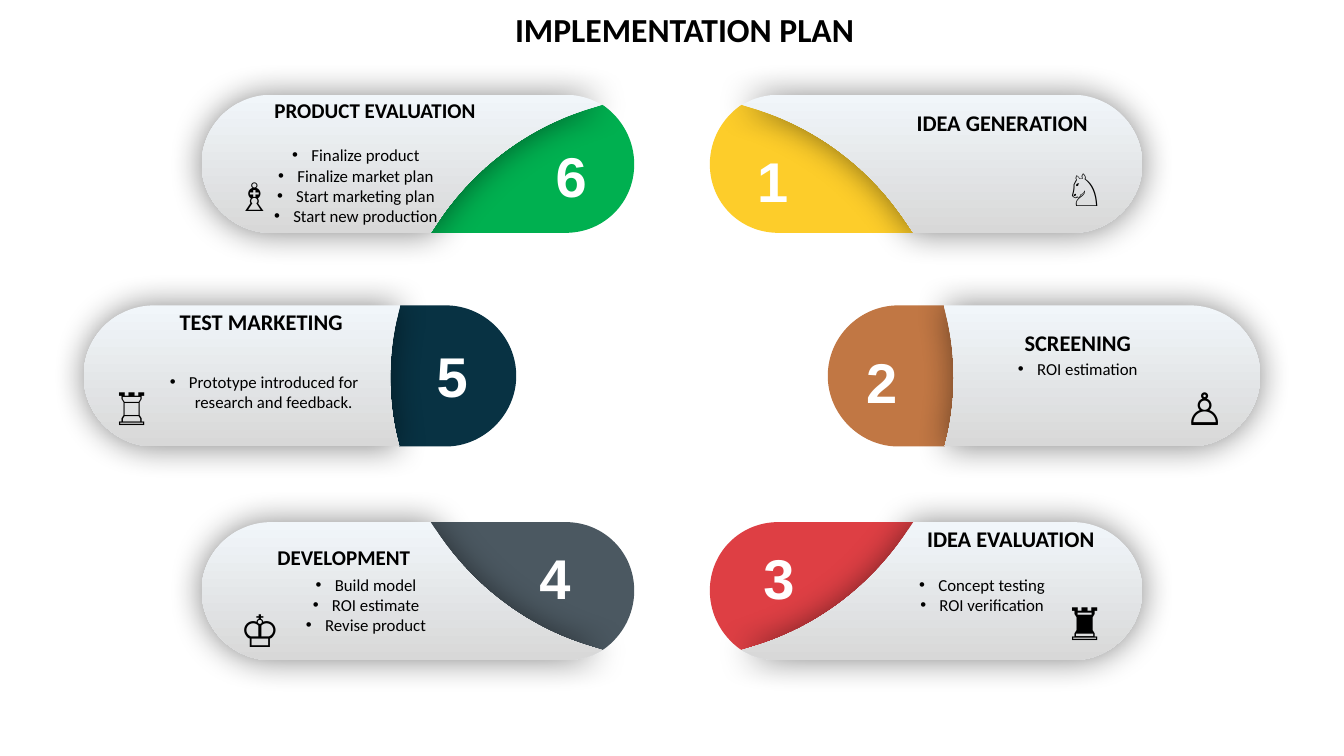
from lxml.etree import SubElement
from pptx import Presentation
from pptx.dml.color import RGBColor
from pptx.enum.text import MSO_ANCHOR, MSO_AUTO_SIZE, PP_ALIGN
from pptx.oxml.ns import qn
from pptx.util import Inches, Pt

WIDTH, HEIGHT = 13.33, 7.5
MIRROR_Y = 7.49  # top edge plus bottom edge of the two outer rows

BLACK = RGBColor(0x00, 0x00, 0x00)
WHITE = RGBColor(0xFF, 0xFF, 0xFF)
PANEL_TOP = RGBColor(0xF1, 0xF6, 0xFA)
PANEL_BOTTOM = RGBColor(0xD8, 0xD8, 0xD8)
YELLOW = RGBColor(0xFD, 0xCD, 0x2A)
COPPER = RGBColor(0xC1, 0x77, 0x44)
RED = RGBColor(0xDE, 0x3F, 0x44)
SLATE = RGBColor(0x4B, 0x58, 0x61)
NAVY = RGBColor(0x08, 0x32, 0x43)
GREEN = RGBColor(0x00, 0xB0, 0x50)

TITLE = "IMPLEMENTATION PLAN"

# Outlines of the top-left and middle-left pieces:
# two numbers are a straight line, six are a curve
CORNER_PANEL = [
    (2.69, 0.94), (5.61, 0.94), (5.7, 0.94, 5.79, 0.96, 5.87, 0.99),
    (5.97, 1.04), (5.84, 1.08), (5.22, 1.27, 4.7, 1.67, 4.35, 2.19),
    (4.27, 2.31), (2.69, 2.31), (2.31, 2.31, 2, 2, 2, 1.63),
    (2, 1.25, 2.31, 0.94, 2.69, 0.94)]
CORNER_TIP = [
    (5.97, 1.04), (5.99, 1.05), (6.17, 1.18, 6.29, 1.39, 6.29, 1.63),
    (6.29, 2.01, 5.99, 2.31, 5.61, 2.31), (4.27, 2.31), (4.35, 2.19),
    (4.7, 1.67, 5.22, 1.27, 5.84, 1.08)]
MIDDLE_PANEL = [
    (1.53, 3.03), (3.97, 3.03), (3.93, 3.19),
    (3.89, 3.37, 3.87, 3.56, 3.87, 3.75),
    (3.87, 3.94, 3.89, 4.13, 3.93, 4.31), (3.96, 4.43), (1.53, 4.43),
    (1.14, 4.43, 0.83, 4.11, 0.83, 3.73),
    (0.83, 3.34, 1.14, 3.03, 1.53, 3.03)]
MIDDLE_TIP = [
    (3.97, 3.03), (4.42, 3.03), (4.8, 3.03, 5.12, 3.34, 5.12, 3.73),
    (5.12, 4.11, 4.8, 4.43, 4.42, 4.43), (3.96, 4.43), (3.93, 4.31),
    (3.89, 4.13, 3.87, 3.94, 3.87, 3.75),
    (3.87, 3.56, 3.89, 3.37, 3.93, 3.19)]
CORNER = (CORNER_TIP, CORNER_PANEL)
MIDDLE = (MIDDLE_TIP, MIDDLE_PANEL)

# Boxes are left, top, width, height
STAGES = [
    dict(number="1", at=(7.28, 1.4), color=YELLOW, pieces=CORNER, right=True, low=False,
         icon="♘", icon_at=(10.46, 1.56), icon_size=32,
         heading="IDEA GENERATION", heading_box=(8.55, 1.03, 2.78, 0.64), size=16,
         steps=[], steps_box=None),
    dict(number="2", at=(8.36, 3.4), color=COPPER, pieces=MIDDLE, right=True, low=False,
         icon="♙", icon_at=(11.65, 3.73), icon_size=32,
         heading="SCREENING", heading_box=(9.5, 3.22, 2.38, 0.37), size=16,
         steps=["ROI estimation"], steps_box=(9.5, 3.51, 2.38, 0.3)),
    dict(number="3", at=(7.34, 5.34), color=RED, pieces=CORNER, right=True, low=True,
         icon="♜", icon_at=(10.46, 5.86), icon_size=32,
         heading="IDEA EVALUATION", heading_box=(8.55, 5.16, 2.95, 0.64), size=16,
         steps=["Concept testing", "ROI verification"], steps_box=(8.55, 5.65, 2.38, 0.5)),
    dict(number="4", at=(5.12, 5.34), color=SLATE, pieces=CORNER, right=False, low=True,
         icon="♔", icon_at=(2.28, 5.93), icon_size=32,
         heading="DEVELOPMENT", heading_box=(2, 5.35, 2.82, 0.35), size=15,
         steps=["Build model", "ROI estimate", "Revise product"],
         steps_box=(2.44, 5.65, 2.38, 0.71)),
    dict(number="5", at=(4.1, 3.34), color=NAVY, pieces=MIDDLE, right=False, low=False,
         icon="♖", icon_at=(1.01, 3.73), icon_size=32,
         heading="TEST MARKETING", heading_box=(1.4, 3.01, 2.38, 0.64), size=16,
         steps=["Prototype introduced for research and feedback."],
         steps_box=(1.43, 3.64, 2.38, 0.5)),
    dict(number="6", at=(5.28, 1.36), color=GREEN, pieces=CORNER, right=False, low=False,
         icon="♗", icon_at=(2.25, 1.66), icon_size=28,
         heading="PRODUCT EVALUATION", heading_box=(2.08, 0.92, 3.28, 0.61), size=15,
         steps=["Finalize product", "Finalize market plan", "Start marketing plan",
                "Start new production"],
         steps_box=(2.34, 1.39, 2.38, 1.11)),
]


def add_piece(page, outline, right, low):
    """Draw an outline, mirrored to the right or to the bottom row."""
    parts = [[(Inches(WIDTH - x if right else x), Inches(MIRROR_Y - y if low else y))
              for x, y in zip(part[::2], part[1::2])] for part in outline]
    corners = [part[-1] for part in parts]
    builder = page.shapes.build_freeform(*corners[0], scale=1.0)
    builder.add_line_segments(corners[1:], close=False)
    piece = builder.convert_to_shape()

    # Bend the sides that have control points, then close the outline
    track = piece._element.spPr.find(".//" + qn("a:moveTo")).getparent()
    for side, part in zip(list(track), parts):
        if len(part) == 3:
            curve = SubElement(track, qn("a:cubicBezTo"))
            for x, y in part:
                SubElement(curve, qn("a:pt"), x=str(x - piece.left), y=str(y - piece.top))
            track.replace(side, curve)
    SubElement(track, qn("a:close"))

    piece.shadow.inherit = False
    piece.line.fill.background()
    return piece


def shade_panel(panel):
    """Give a panel its vertical gradient and soft shadow."""
    panel.fill.gradient()
    panel.fill.gradient_angle = 270
    for stop, color in zip(panel.fill.gradient_stops, (PANEL_TOP, PANEL_BOTTOM)):
        stop.color.rgb = color
    effects = panel._element.spPr.find(qn("a:effectLst"))
    shadow = SubElement(effects, qn("a:outerShdw"), blurRad=str(Pt(24)), dist="0",
                        dir="0", algn="ctr", rotWithShape="0")
    tint = SubElement(shadow, qn("a:srgbClr"), val=str(BLACK))
    SubElement(tint, qn("a:alpha"), val="48000")


def write(box, lines, align=PP_ALIGN.CENTER, bullets=False, color=BLACK, **font):
    frame = box.text_frame
    settings = dict(word_wrap=True, auto_size=MSO_AUTO_SIZE.NONE,
                    vertical_anchor=MSO_ANCHOR.TOP)
    for name, value in settings.items():
        setattr(frame, name, value)
    for index, line in enumerate(lines):
        para = frame.add_paragraph() if index else frame.paragraphs[0]
        para.alignment = align
        span = para.add_run()
        span.text = line
        span.font.color.rgb = color
        for name, value in font.items():
            setattr(span.font, name, value)
        if bullets:
            props = para._p.get_or_add_pPr()
            props.set("marL", str(Inches(0.19)))
            props.set("indent", str(-Inches(0.19)))
            SubElement(props, qn("a:buFont"), typeface="Arial")
            SubElement(props, qn("a:buChar"), char="•")


def add_text(page, area, lines, **style):
    write(page.shapes.add_textbox(*map(Inches, area)), lines, **style)


def main():
    deck = Presentation()
    deck.slide_width, deck.slide_height = Inches(WIDTH), Inches(HEIGHT)
    page = deck.slides.add_slide(deck.slide_layouts[5])

    # Title
    title = page.shapes.title
    title.left, title.top, title.width, title.height = map(Inches, (2.65, 0.04, 8.28, 0.5))
    write(title, [TITLE], name="Calibri", size=Pt(24), bold=True)

    # Coloured tips first, so that panel shadows fall on them
    for stage in STAGES:
        tip = add_piece(page, stage["pieces"][0], stage["right"], stage["low"])
        tip.fill.solid()
        tip.fill.fore_color.rgb = stage["color"]
    for stage in STAGES:
        shade_panel(add_piece(page, stage["pieces"][1], stage["right"], stage["low"]))

    # Icons, numbers, headings and steps
    for stage in STAGES:
        add_text(page, (*stage["icon_at"], 0.62, 0.64), [stage["icon"]],
                 align=PP_ALIGN.LEFT, name="Arial", size=Pt(stage["icon_size"]))
        add_text(page, (*stage["at"], 0.77, 0.77), [stage["number"]],
                 color=WHITE, name="Arial", size=Pt(40), bold=True)
        add_text(page, stage["heading_box"], [stage["heading"]],
                 name="Calibri", size=Pt(stage["size"]), bold=True)
        if stage["steps"]:
            add_text(page, stage["steps_box"], stage["steps"], bullets=True,
                     name="Calibri", size=Pt(12))

    deck.save("out.pptx")


if __name__ == "__main__":
    main()
